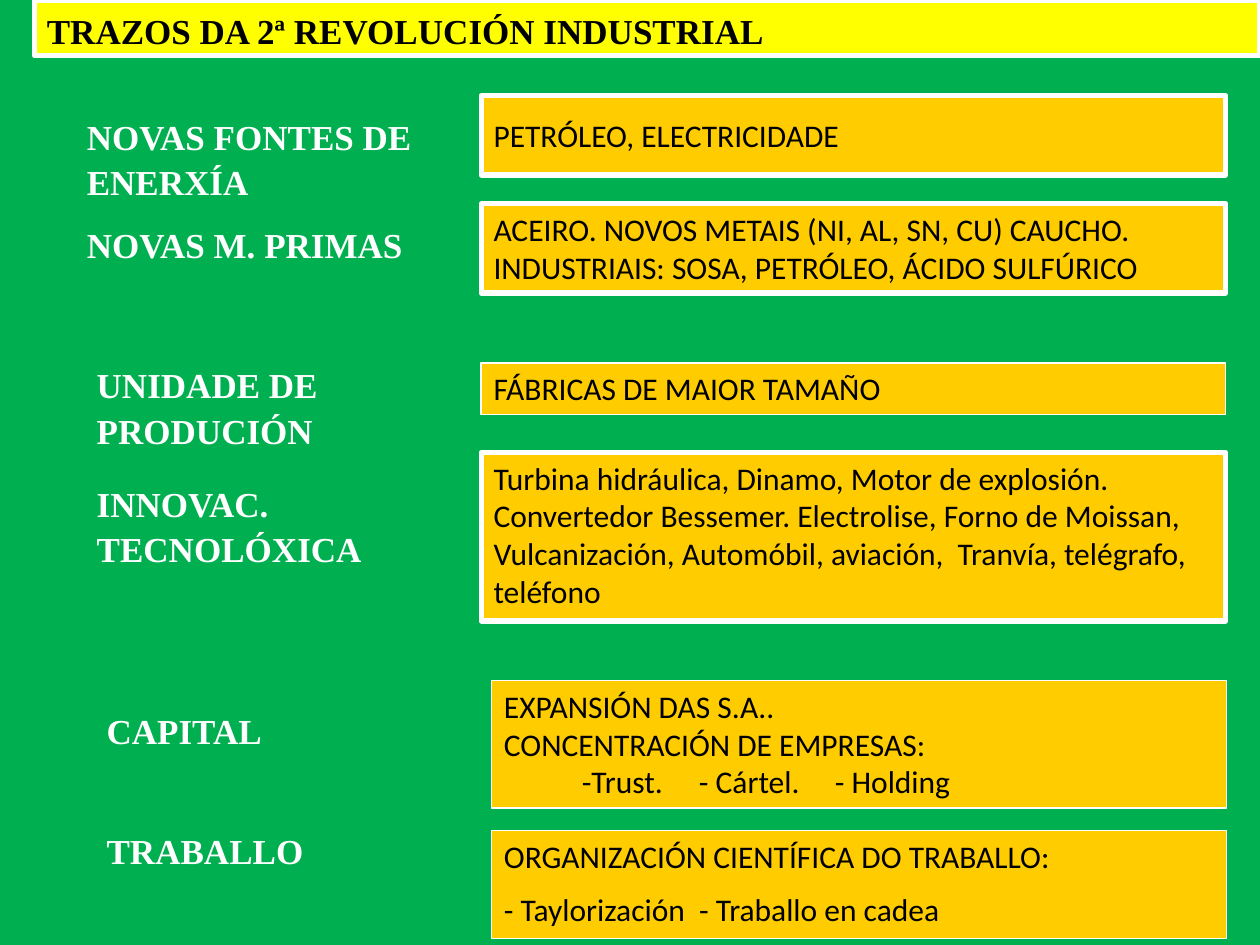
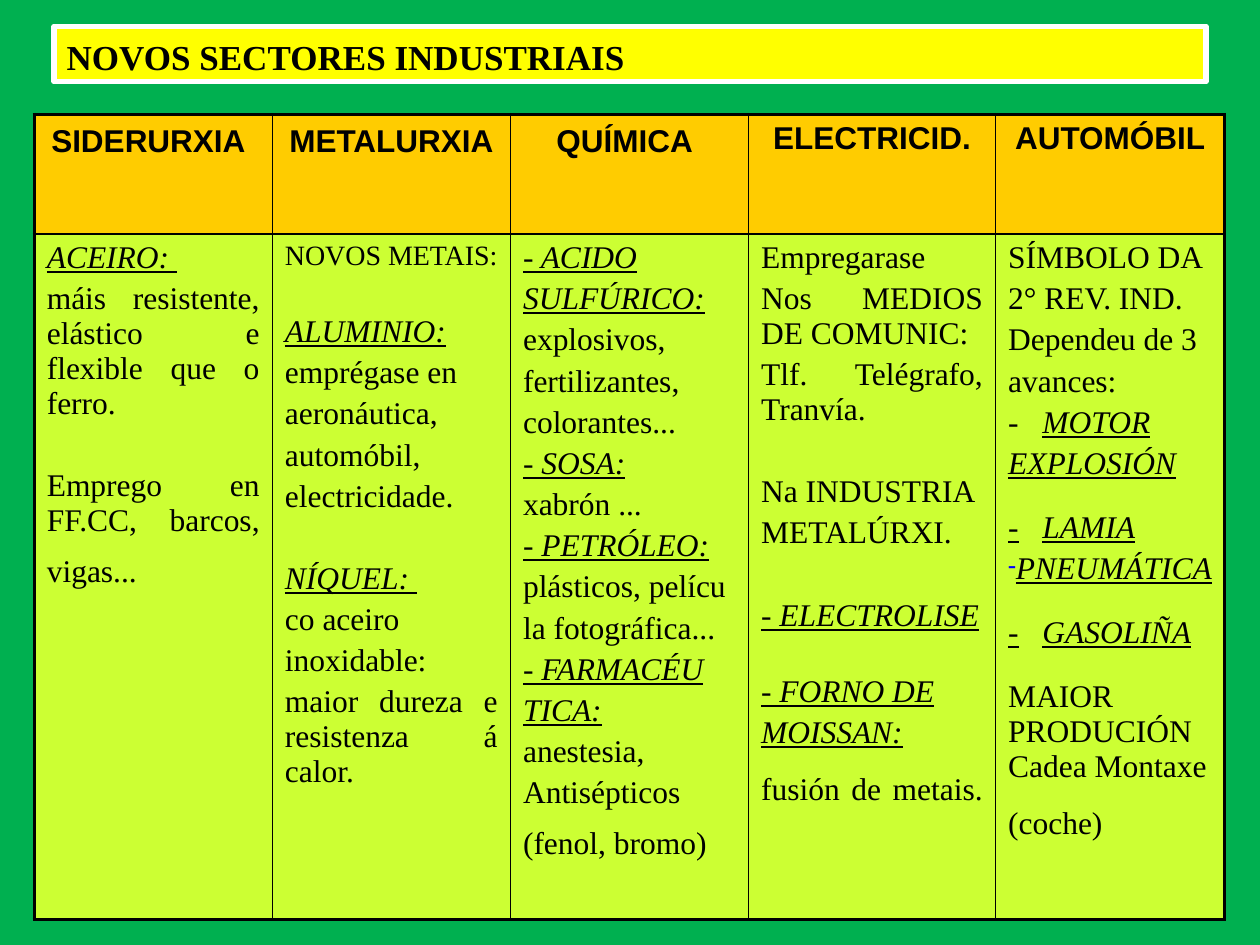
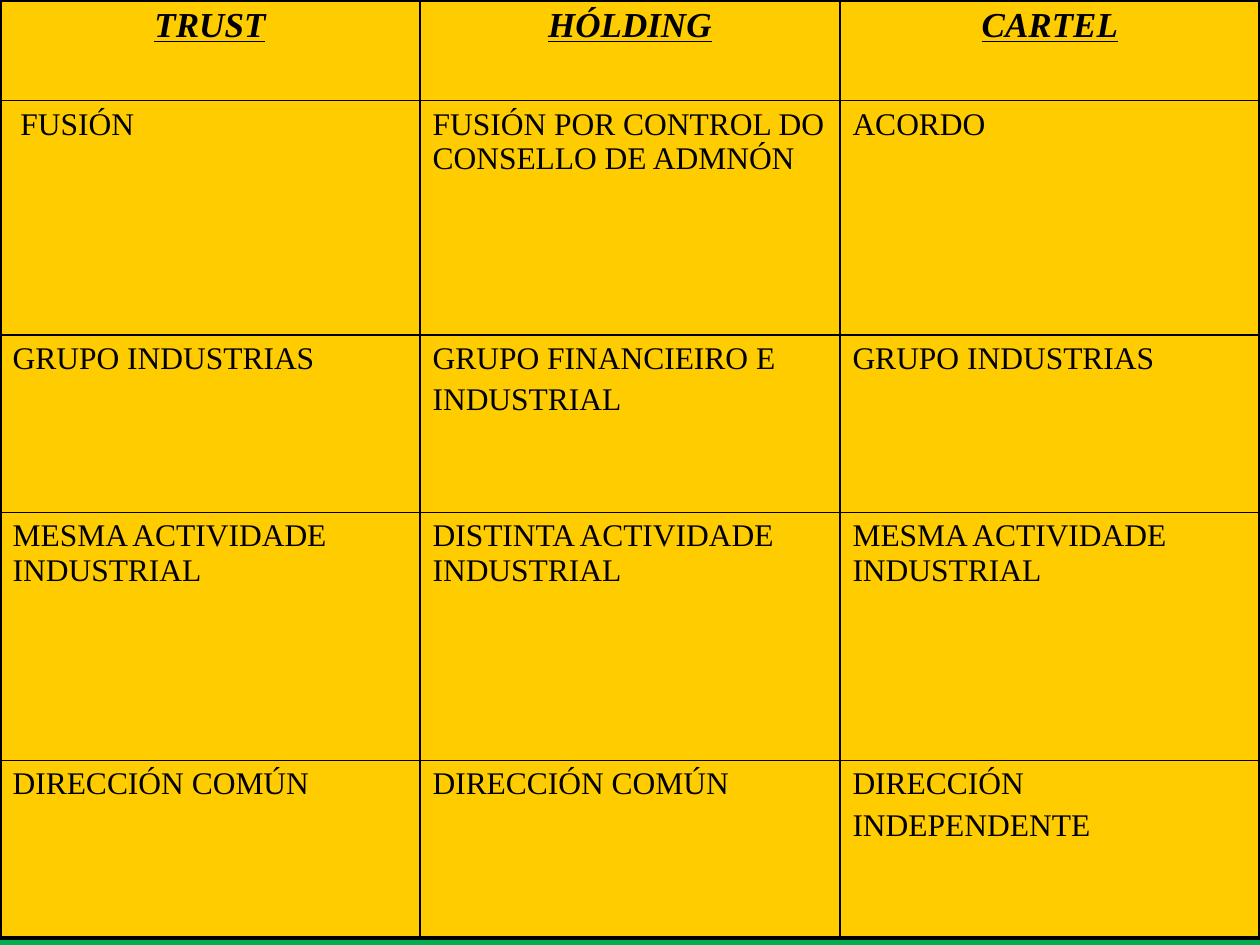
from lxml import etree
from pptx import Presentation
from pptx import util as u
from pptx.dml import color
from pptx.enum import shapes, text
from pptx.oxml import ns

COLORS = {"green": "00B050", "yellow": "FFFF00", "orange": "FFCC00",
          "lime": "CCFF33", "white": "FFFFFF", "black": "000000", "blue": "0000FF"}
SERIF, SANS, BODY = "Times New Roman", "Arial", "Calibri"
LEFT, CENTER, JUSTIFY = (text.PP_ALIGN.LEFT, text.PP_ALIGN.CENTER, text.PP_ALIGN.JUSTIFY)


def rgb(name):
    return color.RGBColor.from_string(COLORS[name])


def child(parent, tag, **attributes):
    return etree.SubElement(parent, ns.qn(tag), attributes)


def add_run(paragraph, words, font, size, ink="black", bold=False, marked=False):
    """Add a run; marked words are italic and underlined."""
    run = paragraph.add_run()
    run.text = words
    face = run.font
    face.name, face.size, face.bold = font, u.Pt(size), bold
    face.italic = face.underline = marked
    face.color.rgb = rgb(ink)


def write_paragraph(paragraph, words, font=BODY, size=18, ink="black", bold=False,
                    marked=False, align=LEFT, before=0, spacing=None, lead="",
                    strut=0, dash=False, tabs=()):
    """lead is plain text before marked words; strut is the size of a closing space
    that raises the last line; tabs are stops in centimetres."""
    paragraph.alignment = align
    paragraph.space_before = u.Pt(before)
    if spacing:
        paragraph.line_spacing = spacing
    properties = paragraph._p.get_or_add_pPr()
    if dash:
        properties.set("marL", "0")
        properties.set("indent", "0")
        child(child(properties, "a:buClr"), "a:srgbClr", val=COLORS["blue"])
        child(properties, "a:buSzPct", val="75000")
        child(properties, "a:buChar", char="-")
    if tabs:
        stops = child(properties, "a:tabLst")
        for stop in tabs:
            child(stops, "a:tab", pos=str(u.Cm(stop)), algn="l")
    if lead:
        add_run(paragraph, lead, font, size, ink, bold)
    for number, part in enumerate(words.split("\v")):
        if number:
            paragraph.add_line_break()
        add_run(paragraph, part, font, size, ink, bold, marked)
    if strut:
        add_run(paragraph, " ", SANS, strut, ink)


def write(frame, lines, **style):
    """Fill a frame with lines, each a string or a pair of string and own format."""
    frame.word_wrap = True
    for number, line in enumerate(lines):
        words, own = (line, {}) if isinstance(line, str) else line
        paragraph = frame.add_paragraph() if number else frame.paragraphs[0]
        write_paragraph(paragraph, words, **{**style, **own})


class Deck:
    TITLE_ONLY, BLANK = 5, 6
    HEADING = dict(font=SERIF, size=20, bold=True, spacing=1.08)
    INNER, OUTER = 1, 2.25

    def __init__(self):
        self.prs = Presentation()
        self.prs.slide_width, self.prs.slide_height = u.Cm(25.4), u.Cm(19.05)
        backdrop = self.prs.slide_master.background.fill
        backdrop.solid()
        backdrop.fore_color.rgb = rgb("green")
        self.slide = None

    def new_slide(self, layout):
        self.slide = self.prs.slides.add_slide(self.prs.slide_layouts[layout])

    def paint(self, shape, fill, line):
        shape.fill.solid()
        shape.fill.fore_color.rgb = rgb(fill)
        shape.line.color.rgb = rgb("white")
        shape.line.width = u.Pt(line)

    def title(self, words, left, top, width):
        band = self.slide.shapes.title
        band.left, band.top, band.width, band.height = map(u.Cm, (left, top, width, 1.12))
        self.paint(band, "yellow", 3)
        frame = band.text_frame
        frame.auto_size = text.MSO_AUTO_SIZE.NONE
        frame.vertical_anchor = text.MSO_ANCHOR.TOP
        write(frame, [words], **self.HEADING)

    def label(self, words, *place):
        caption = self.slide.shapes.add_textbox(*map(u.Cm, place))
        write(caption.text_frame, [words], ink="white", **self.HEADING)

    def box(self, lines, *place, line=3, anchor=text.MSO_ANCHOR.TOP, **style):
        panel = self.slide.shapes.add_shape(shapes.MSO_SHAPE.RECTANGLE, *map(u.Cm, place))
        panel.shadow.inherit = False
        self.paint(panel, "orange", line)
        panel.text_frame.vertical_anchor = anchor
        write(panel.text_frame, lines, **style)

    def borders(self, cell, edges):
        """edges tells for each side whether it lies on the outside of the table."""
        properties = cell._tc.get_or_add_tcPr()
        for side, outside in zip("LRTB", edges):
            width = u.Pt(self.OUTER if outside else self.INNER)
            line = child(properties, f"a:ln{side}", w=str(width))
            child(child(line, "a:solidFill"), "a:srgbClr", val=COLORS["black"])

    def table(self, rows, left, top, widths, heights, fills, head, body):
        """rows hold cells, each a list of lines; head and body are text formats."""
        place = (left, top, sum(widths), sum(heights))
        grid = self.slide.shapes.add_table(len(rows), len(widths), *map(u.Cm, place)).table
        grid.first_row = grid.horz_banding = False
        for column, width in zip(grid.columns, widths):
            column.width = u.Cm(width)
        for r, (cells, height) in enumerate(zip(rows, heights)):
            grid.rows[r].height = u.Cm(height)
            for c, lines in enumerate(cells):
                cell = grid.cell(r, c)
                self.borders(cell, (c == 0, c == len(widths) - 1,
                                    r == 0, r == len(rows) - 1))
                cell.fill.solid()
                cell.fill.fore_color.rgb = rgb(fills[min(r, 1)])
                write(cell.text_frame, lines, **(body if r else head))


def marked(words, **style):
    return words, dict(marked=True, **style)


def features_slide(deck):
    deck.new_slide(deck.TITLE_ONLY)
    deck.title("TRAZOS DA 2ª REVOLUCIÓN INDUSTRIAL", 0.69, 0, 24.71)
    for words, *place in [
        ("NOVAS FONTES DE ENERXÍA", 1.5, 2.13, 7.21, 1.96),
        ("NOVAS M. PRIMAS", 1.5, 4.32, 7.19, 1.09),
        ("UNIDADE DE PRODUCIÓN", 1.7, 7.14, 6.4, 1.96),
        ("INNOVAC. TECNOLÓXICA", 1.7, 9.53, 6.2, 1.96),
        ("CAPITAL", 1.9, 14.12, 5.59, 1.09),
        ("TRABALLO", 1.9, 16.54, 5.79, 1.09),
    ]:
        deck.label(words, *place)

    wide, narrow = (9.7, 15.01), (9.91, 14.81)
    thin = dict(line=0.75)
    for lines, (left, width), top, height, style in [
        (["PETRÓLEO, ELECTRICIDADE"], wide, 1.93, 1.6,
         dict(anchor=text.MSO_ANCHOR.MIDDLE)),
        (["ACEIRO. NOVOS METAIS (NI, AL, SN, CU) CAUCHO. "
          "INDUSTRIAIS: SOSA, PETRÓLEO, ÁCIDO SULFÚRICO"], wide, 4.11, 1.8, {}),
        (["FÁBRICAS DE MAIOR TAMAÑO"], wide, 7.32, 1.04, thin),
        (["Turbina hidráulica, Dinamo, Motor de explosión. Convertedor Bessemer. "
          "Electrolise, Forno de Moissan, Vulcanización, Automóbil, aviación,  "
          "Tranvía, telégrafo, teléfono"], wide, 9.12, 3.4, {}),
        (["EXPANSIÓN DAS S.A..", "CONCENTRACIÓN DE EMPRESAS:",
          ("\t-Trust.\t- Cártel.\t- Holding", dict(tabs=(1.57, 3.93, 6.67)))],
         narrow, 13.72, 2.57, thin),
        (["ORGANIZACIÓN CIENTÍFICA DO TRABALLO:",
          ("- Taylorización  - Traballo en cadea", dict(before=9))],
         narrow, 16.74, 2.18, thin),
    ]:
        deck.box(lines, left, top, width, height, **style)


def sectors_slide(deck):
    deck.new_slide(deck.TITLE_ONLY)
    deck.title("NOVOS SECTORES INDUSTRIAIS", 1.09, 0.53, 23.22)
    group, step = 27, 16.7  # space before a new group, before a new item
    item = dict(tabs=(0.69,))
    heads = [[(name, dict(strut=20))] for name in ("SIDERURXIA", "METALURXIA", "QUÍMICA")]
    heads += [["ELECTRICID."], ["AUTOMÓBIL"]]
    steel = [
        marked("ACEIRO: ", align=LEFT),
        "máis resistente, elástico e flexible que o ferro.",
        ("Emprego en FF.CC, barcos, vigas...", dict(before=group, strut=28)),
    ]
    metals = [
        ("NOVOS METAIS:", dict(size=16)),
        marked("ALUMINIO:", before=24.5),
        "emprégase en", "aeronáutica,", "automóbil,", "electricidade.",
        marked("NÍQUEL: ", before=group),
        "co aceiro", "inoxidable:", "maior dureza e resistenza á calor.",
    ]
    chemistry = [
        marked("- ACIDO"), marked("SULFÚRICO:"),
        "explosivos,", "fertilizantes,", "colorantes...",
        marked("- SOSA:"), "xabrón ...",
        marked("- PETRÓLEO:"), "plásticos, pelícu", "la fotográfica...",
        marked("- FARMACÉU"), marked("TICA:"), "anestesia,",
        ("Antisépticos (fenol, bromo)", dict(strut=28)),
    ]
    electricity = [
        "Empregarase", "Nos MEDIOS DE COMUNIC:", "Tlf. Telégrafo, Tranvía.",
        ("Na INDUSTRIA", dict(before=group)), "METALÚRXI.",
        marked("- ELECTROLISE", before=group),
        marked("- FORNO DE", before=23.5), marked("MOISSAN:"),
        ("fusión de metais.", dict(strut=28)),
    ]
    cars = [
        "SÍMBOLO DA", "2° REV. IND.", "Dependeu de 3", "avances:",
        marked("MOTOR", lead="-\t", **item), marked("EXPLOSIÓN"),
        marked("-\tLAMIA", before=step, **item), marked("PNEUMÁTICA", dash=True),
        marked("-\tGASOLIÑA", before=step, **item),
        ("MAIOR PRODUCIÓN\vCadea Montaxe", dict(before=step)),
        ("(coche)", dict(strut=28)),
    ]
    deck.table([heads, [steel, metals, chemistry, electricity, cars]],
               0.69, 2.31, [4.8, 4.8, 4.8, 4.98, 4.62], [2.41, 13.82],
               ("orange", "lime"),
               dict(font=SANS, bold=True, align=CENTER),
               dict(font=SERIF, align=JUSTIFY, before=3.6))


def concentration_slide(deck):
    deck.new_slide(deck.BLANK)
    rows = [
        [["TRUST"], ["HÓLDING"], ["CARTEL"]],
        [[" FUSIÓN"], ["FUSIÓN POR CONTROL DO CONSELLO DE ADMNÓN"], ["ACORDO"]],
        [["GRUPO INDUSTRIAS"], ["GRUPO FINANCIEIRO E", "INDUSTRIAL"],
         ["GRUPO INDUSTRIAS"]],
        [[f"{kind} ACTIVIDADE INDUSTRIAL"] for kind in ("MESMA", "DISTINTA", "MESMA")],
        [["DIRECCIÓN COMÚN"], ["DIRECCIÓN COMÚN"], ["DIRECCIÓN", "INDEPENDENTE"]],
    ]
    deck.table(rows, 0, 0, [25.4 / 3] * 3, [2.03, 4.72, 3.58, 5, 3.58],
               ("orange", "orange"),
               dict(font=SERIF, size=20, bold=True, marked=True, align=CENTER),
               dict(font=SERIF, before=3.6))


def main():
    deck = Deck()
    features_slide(deck)
    sectors_slide(deck)
    concentration_slide(deck)
    deck.prs.save("out.pptx")


if __name__ == "__main__":
    main()
